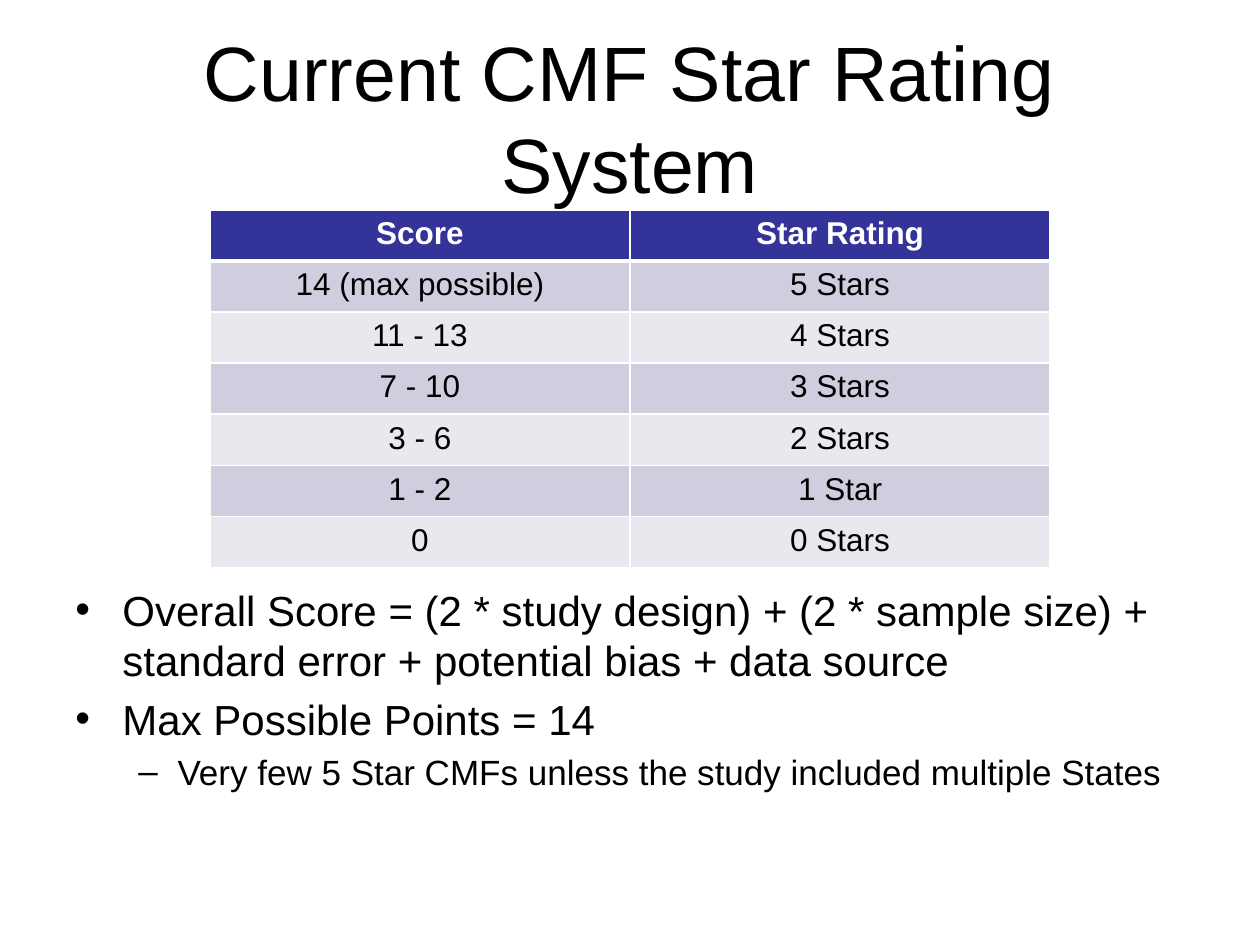
from lxml.etree import SubElement
from pptx import Presentation
from pptx.dml.color import RGBColor
from pptx.enum.text import MSO_ANCHOR, PP_ALIGN
from pptx.oxml.ns import qn
from pptx.util import Cm, Pt

BLACK = RGBColor(0x00, 0x00, 0x00)
WHITE = RGBColor(0xFF, 0xFF, 0xFF)
INDIGO = RGBColor(0x33, 0x33, 0x99)
LAVENDER = RGBColor(0xCE, 0xCE, 0xDE)
MIST = RGBColor(0xE8, 0xE8, 0xEF)

RATINGS = [
    ("Score", "Star Rating"),
    ("14 (max possible)", "5 Stars"),
    ("11 - 13", "4 Stars"),
    ("7 - 10", "3 Stars"),
    ("3 - 6", "2 Stars"),
    ("1 - 2", "1 Star"),
    ("0", "0 Stars"),
]
NOTES = [
    (0, "Overall Score = (2 * study design) + (2 * sample size) + "
        "standard error + potential bias + data source"),
    (0, "Max Possible Points = 14"),
    (1, "Very few 5 Star CMFs unless the study included multiple States"),
]
LEVELS = [("•", 24, 0.95, 0.95), ("–", 20, 2.06, 0.79)]


class SlideBuilder:
    font_name = "Arial"

    def __init__(self, page):
        self.page = page

    def style(self, para, size, color=BLACK, bold=False):
        para.font.name = self.font_name
        para.font.size = Pt(size)
        para.font.bold = bold
        para.font.color.rgb = color

    def text_frame(self, left, top, width, height):
        box = self.page.shapes.add_textbox(Cm(left), Cm(top), Cm(width), Cm(height))
        box.text_frame.word_wrap = True
        return box.text_frame

    def title(self, text, *area):
        frame = self.text_frame(*area)
        frame.vertical_anchor = MSO_ANCHOR.MIDDLE
        para = frame.paragraphs[0]
        para.text = text
        para.alignment = PP_ALIGN.CENTER
        self.style(para, 44)

    def bullets(self, items, *area):
        frame = self.text_frame(*area)
        for index, (level, text) in enumerate(items):
            para = frame.add_paragraph() if index else frame.paragraphs[0]
            mark, size, margin, hanging = LEVELS[level]
            para.text = text
            para.level = level
            if index:
                para.space_before = Pt(size * 0.2)
            properties = para._p.get_or_add_pPr()
            properties.set("marL", str(Cm(margin)))
            properties.set("indent", str(-Cm(hanging)))
            SubElement(properties, qn("a:buFont"), typeface=self.font_name)
            SubElement(properties, qn("a:buChar"), char=mark)
            self.style(para, size)

    def borders(self, cell, **widths):
        properties = cell._tc.get_or_add_tcPr()
        for position, (side, width) in enumerate(widths.items()):
            line = properties.makeelement(qn(f"a:ln{side}"), w=str(Pt(width)))
            fill = SubElement(line, qn("a:solidFill"))
            SubElement(fill, qn("a:srgbClr"), val=str(WHITE))
            properties.insert(position, line)

    def table(self, rows, left, top, column_width, row_height):
        columns = len(rows[0])
        table = self.page.shapes.add_table(
            len(rows), columns, Cm(left), Cm(top),
            Cm(column_width * columns), Cm(row_height * len(rows))).table
        for row_index, row in enumerate(rows):
            header = row_index == 0
            for column_index, text in enumerate(row):
                cell = table.cell(row_index, column_index)
                cell.fill.solid()
                cell.fill.fore_color.rgb = (
                    INDIGO if header else LAVENDER if row_index % 2 else MIST)
                self.borders(cell, L=1, R=1, T=3 if row_index == 1 else 1,
                             B=3 if header else 1)
                para = cell.text_frame.paragraphs[0]
                para.text = text
                para.alignment = PP_ALIGN.CENTER
                self.style(para, 18, WHITE if header else BLACK, header)


def main():
    deck = Presentation()
    deck.slide_width, deck.slide_height = Cm(25.4), Cm(19.05)
    builder = SlideBuilder(deck.slides.add_slide(deck.slide_layouts[6]))
    builder.title("Current CMF Star Rating System", 1.27, 0.76, 22.86, 3.18)
    builder.bullets(NOTES, 1.27, 11.65, 22.86, 5.35)
    builder.table(RATINGS, 4.23, 4.23, 8.47, 1.03)
    deck.save("out.pptx")


if __name__ == "__main__":
    main()
